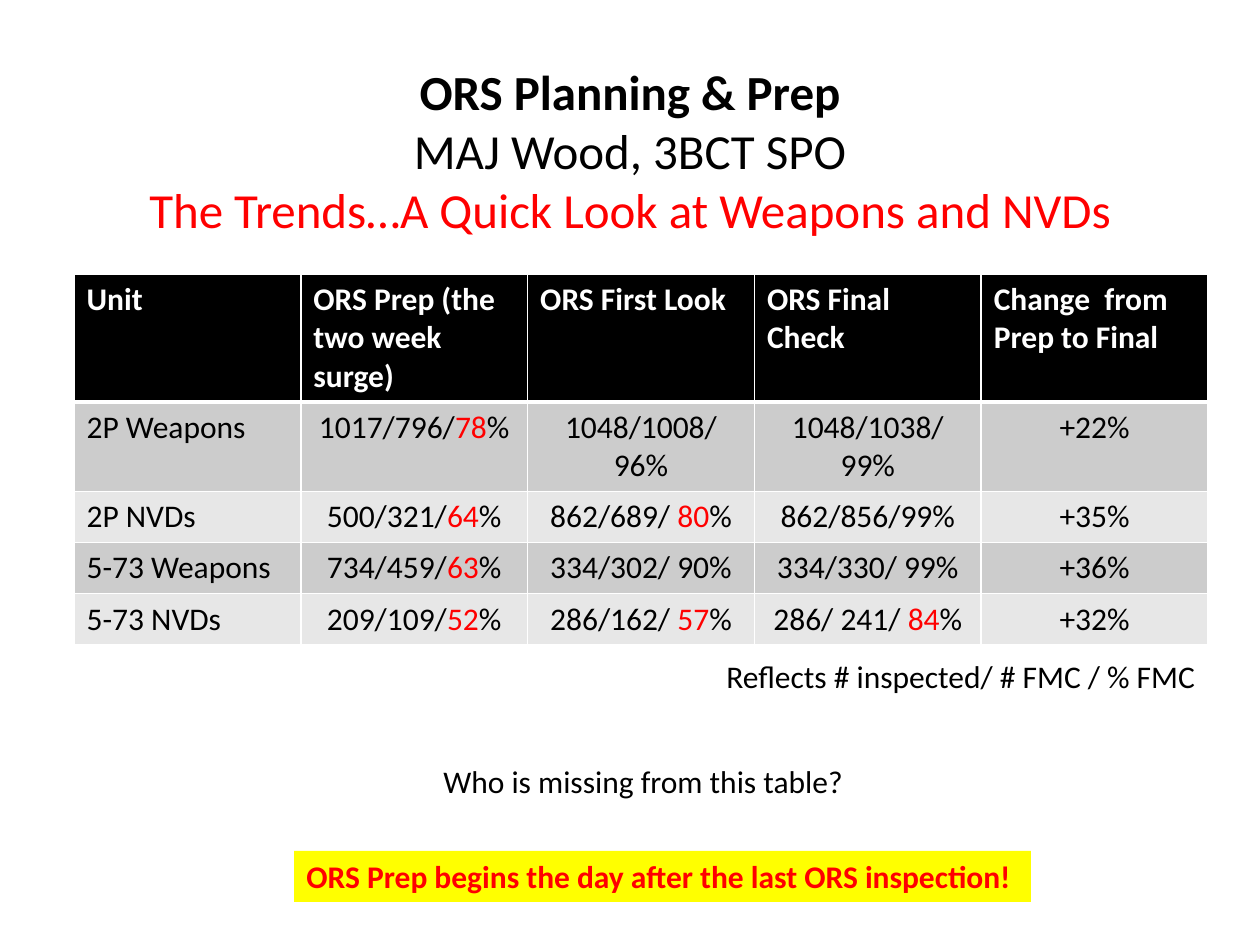
from dataclasses import dataclass

from lxml import etree
from pptx import Presentation
from pptx import util as u
from pptx.dml.color import RGBColor
from pptx.enum import shapes, text
from pptx.oxml import ns
from pptx.slide import Slide

BLACK = RGBColor(0x00, 0x00, 0x00)
WHITE = RGBColor(0xFF, 0xFF, 0xFF)
RED = RGBColor(0xFF, 0x00, 0x00)
YELLOW = RGBColor(0xFF, 0xFF, 0x00)
DARK_BAND = RGBColor(0xCC, 0xCC, 0xCC)
LIGHT_BAND = RGBColor(0xE7, 0xE7, 0xE7)

PX = u.Inches(1) / 126
ROW_HEIGHT = 51

TITLE_LINES = [
    ("ORS Planning & Prep", BLACK, True),
    ("MAJ Wood, 3BCT SPO", BLACK, False),
    ("The Trends…A Quick Look at Weapons and NVDs", RED, False),
]
RED_MARK = "|"
READINESS = [
    ["Unit", "ORS Prep (the two week surge)", "ORS First Look", "ORS Final Check",
     "Change  from Prep to Final"],
    ["2P Weapons", "1017/796/|78|%", "1048/1008/ 96%", "1048/1038/ 99%", "+22%"],
    ["2P NVDs", "500/321/|64|%", "862/689/ |80|%", "862/856/99%", "+35%"],
    ["5-73 Weapons", "734/459/|63|%", "334/302/ 90%", "334/330/ 99%", "+36%"],
    ["5-73 NVDs", "209/109/|52|%", "286/162/ |57|%", "286/ 241/ |84|%", "+32%"],
]


def px(*lengths):
    return [u.Emu(round(length * PX)) for length in lengths]


@dataclass
class Deck:
    slide: Slide
    font: str = "Calibri"
    title_size: int = 28
    body_size: int = 18

    def style(self, run, color, size, bold=False):
        run.font.name = self.font
        run.font.size = u.Pt(size)
        run.font.bold = bold
        run.font.color.rgb = color

    def title(self, box, lines):
        title = self.slide.shapes.title
        title.left, title.top, title.width, title.height = px(*box)
        frame = title.text_frame
        frame.vertical_anchor = text.MSO_ANCHOR.MIDDLE
        frame.text = "\v".join(words for words, _, _ in lines)
        paragraph = frame.paragraphs[0]
        paragraph.alignment = text.PP_ALIGN.CENTER
        for run, (_, color, bold) in zip(paragraph.runs, lines):
            self.style(run, color, self.title_size, bold)

    def label(self, box, words):
        shape = self.slide.shapes.add_textbox(*px(*box))
        self.fill_label(shape, words, BLACK)

    def banner(self, box, words):
        shape = self.slide.shapes.add_shape(shapes.MSO_SHAPE.RECTANGLE, *px(*box))
        shape.shadow.inherit = False
        shape.fill.solid()
        shape.fill.fore_color.rgb = YELLOW
        shape.line.fill.background()
        self.fill_label(shape, words, RED, True)

    def fill_label(self, shape, words, color, bold=False):
        frame = shape.text_frame
        frame.word_wrap = True
        frame.vertical_anchor = text.MSO_ANCHOR.TOP
        frame.text = words
        paragraph = frame.paragraphs[0]
        paragraph.alignment = text.PP_ALIGN.LEFT
        self.style(paragraph.runs[0], color, self.body_size, bold)

    def table(self, left, top, width, rows):
        height = ROW_HEIGHT * len(rows)
        frame = self.slide.shapes.add_table(
            len(rows), len(rows[0]), *px(left, top, width, height))
        for i, row in enumerate(rows):
            for j, words in enumerate(row):
                self.cell(frame.table.cell(i, j), words, i, j)

    def cell(self, cell, words, row, column):
        header = row == 0
        cell.fill.solid()
        cell.fill.fore_color.rgb = (
            BLACK if header else DARK_BAND if row % 2 else LIGHT_BAND)
        paragraph = cell.text_frame.paragraphs[0]
        if not header and column > 0:
            paragraph.alignment = text.PP_ALIGN.CENTER
        for k, piece in enumerate(words.split(RED_MARK)):
            run = paragraph.add_run()
            run.text = piece
            color = WHITE if header else RED if k % 2 else BLACK
            self.style(run, color, self.body_size, header)
        self.borders(cell, top=3 if row == 1 else 1, bottom=3 if header else 1)

    def borders(self, cell, top, bottom):
        properties = cell._tc.get_or_add_tcPr()
        widths = {"a:lnL": 1, "a:lnR": 1, "a:lnT": top, "a:lnB": bottom}
        for index, (tag, width) in enumerate(widths.items()):
            line = etree.Element(ns.qn(tag), w=str(u.Pt(width)))
            fill = etree.SubElement(line, ns.qn("a:solidFill"))
            etree.SubElement(fill, ns.qn("a:srgbClr"), val=str(WHITE))
            properties.insert(index, line)


def main():
    presentation = Presentation()
    presentation.slide_width, presentation.slide_height = px(1260, 945)
    title_only = presentation.slide_layouts[5]
    deck = Deck(presentation.slides.add_slide(title_only))
    deck.title((63, 38, 1134, 224), TITLE_LINES)
    deck.table(74, 274, 1134, READINESS)
    deck.banner((294, 851, 737, 51), "ORS Prep begins the day after the last ORS inspection!")
    deck.label((714, 651, 508, 51), "Reflects # inspected/ # FMC / % FMC")
    deck.label((431, 756, 430, 51), "Who is missing from this table?")
    presentation.save("out.pptx")


if __name__ == "__main__":
    main()
